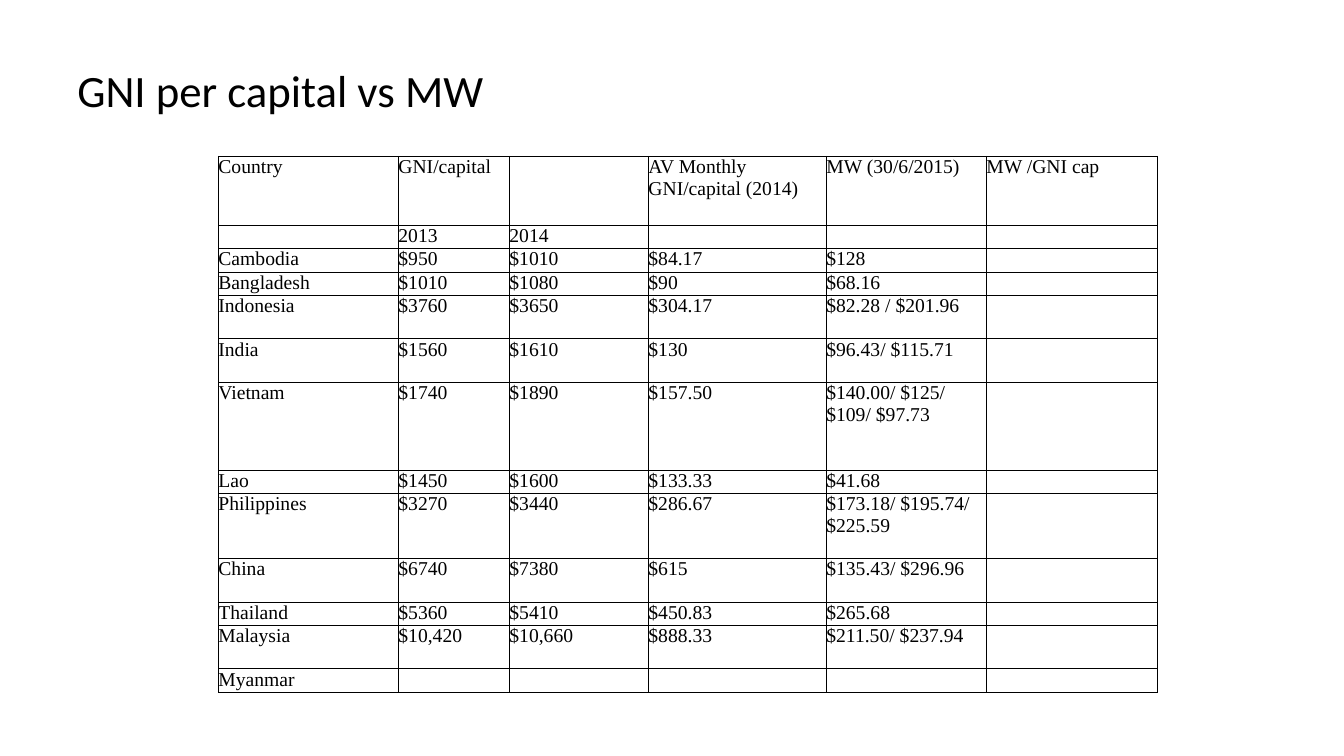
from lxml.etree import SubElement
from pptx import Presentation
from pptx.dml.color import RGBColor
from pptx.enum.text import MSO_ANCHOR, PP_ALIGN
from pptx.oxml.ns import qn
from pptx.util import Pt

BLACK = RGBColor(0, 0, 0)
TITLE_FONT = {"name": "Calibri", "size": Pt(32), "bold": False}
CELL_FONT = {"name": "Times New Roman", "size": Pt(14), "bold": False}
CELL_FORMAT = {"margin_left": 0, "margin_right": 0, "margin_top": 0,
               "margin_bottom": 0, "vertical_anchor": MSO_ANCHOR.TOP}
TABLE_FORMAT = {"first_row": False, "horz_banding": False}

COLUMN_WIDTHS = [128.6, 79.3, 99.3, 127.1, 114.3, 122.1]
SINGLE, DOUBLE = 16.7, 31
WAGE_ROWS = [
    (49.2, ["Country", "GNI/capital", "", "AV Monthly GNI/capital (2014)",
            "MW (30/6/2015)", "MW /GNI cap"]),
    (SINGLE, ["", "2013", "2014"]),
    (SINGLE, ["Cambodia", "$950", "$1010", "$84.17", "$128"]),
    (SINGLE, ["Bangladesh", "$1010", "$1080", "$90", "$68.16"]),
    (DOUBLE, ["Indonesia", "$3760", "$3650", "$304.17", "$82.28 / $201.96"]),
    (DOUBLE, ["India", "$1560", "$1610", "$130", "$96.43/ $115.71"]),
    (63, ["Vietnam", "$1740", "$1890", "$157.50", "$140.00/ $125/ $109/ $97.73"]),
    (SINGLE, ["Lao", "$1450", "$1600", "$133.33", "$41.68"]),
    (46.4, ["Philippines", "$3270", "$3440", "$286.67", "$173.18/ $195.74/ $225.59"]),
    (DOUBLE, ["China", "$6740", "$7380", "$615", "$135.43/ $296.96"]),
    (SINGLE, ["Thailand", "$5360", "$5410", "$450.83", "$265.68"]),
    (DOUBLE, ["Malaysia", "$10,420", "$10,660", "$888.33", "$211.50/ $237.94"]),
    (SINGLE, ["Myanmar"]),
]


def apply_format(target, values):
    for name, value in values.items():
        setattr(target, name, value)


class SlideBuilder:
    def __init__(self, page, color, border_width):
        self.page = page
        self.color = color
        self.border_width = border_width

    def add_text(self, para, text, font):
        if text:
            span = para.add_run()
            span.text = text
            apply_format(span.font, font)
            span.font.color.rgb = self.color
        else:
            ending = SubElement(para._p, qn("a:endParaRPr"), sz=str(int(font["size"].pt * 100)))
            SubElement(ending, qn("a:latin"), typeface=font["name"])

    def add_title(self, text, left, top, width, height):
        box = self.page.shapes.title
        apply_format(box, {"left": Pt(left), "top": Pt(top),
                           "width": Pt(width), "height": Pt(height)})
        apply_format(box.text_frame, {"vertical_anchor": MSO_ANCHOR.MIDDLE, "word_wrap": True})
        para = box.text_frame.paragraphs[0]
        apply_format(para, {"alignment": PP_ALIGN.LEFT, "line_spacing": 0.9})
        self.add_text(para, text, TITLE_FONT)

    def add_border(self, cell):
        properties = cell._tc.get_or_add_tcPr()
        for side in ("lnL", "lnR", "lnT", "lnB"):
            line = SubElement(properties, qn(f"a:{side}"), w=str(Pt(self.border_width)))
            fill = SubElement(line, qn("a:solidFill"))
            SubElement(fill, qn("a:srgbClr"), val=str(self.color))

    def add_table(self, rows, widths, left, top):
        height = sum(row_height for row_height, _ in rows)
        frame = self.page.shapes.add_table(len(rows), len(widths), Pt(left), Pt(top),
                                           Pt(sum(widths)), Pt(height))
        table = frame.table
        apply_format(table, TABLE_FORMAT)
        for column, width in zip(table.columns, widths):
            column.width = Pt(width)
        for row, (row_height, texts) in zip(table.rows, rows):
            row.height = Pt(row_height)
            for index, cell in enumerate(row.cells):
                apply_format(cell, CELL_FORMAT)
                self.add_border(cell)
                cell.fill.background()
                text = texts[index] if index < len(texts) else ""
                self.add_text(cell.text_frame.paragraphs[0], text, CELL_FONT)


def main():
    deck = Presentation()
    apply_format(deck, {"slide_width": Pt(960), "slide_height": Pt(540)})
    page = deck.slides.add_slide(deck.slide_layouts[5])
    builder = SlideBuilder(page, BLACK, 0.5)
    builder.add_table(WAGE_ROWS, COLUMN_WIDTHS, 156, 111.6)
    builder.add_title("GNI per capital vs MW", 48, 21.6, 864, 90)
    deck.save("out.pptx")


if __name__ == "__main__":
    main()
